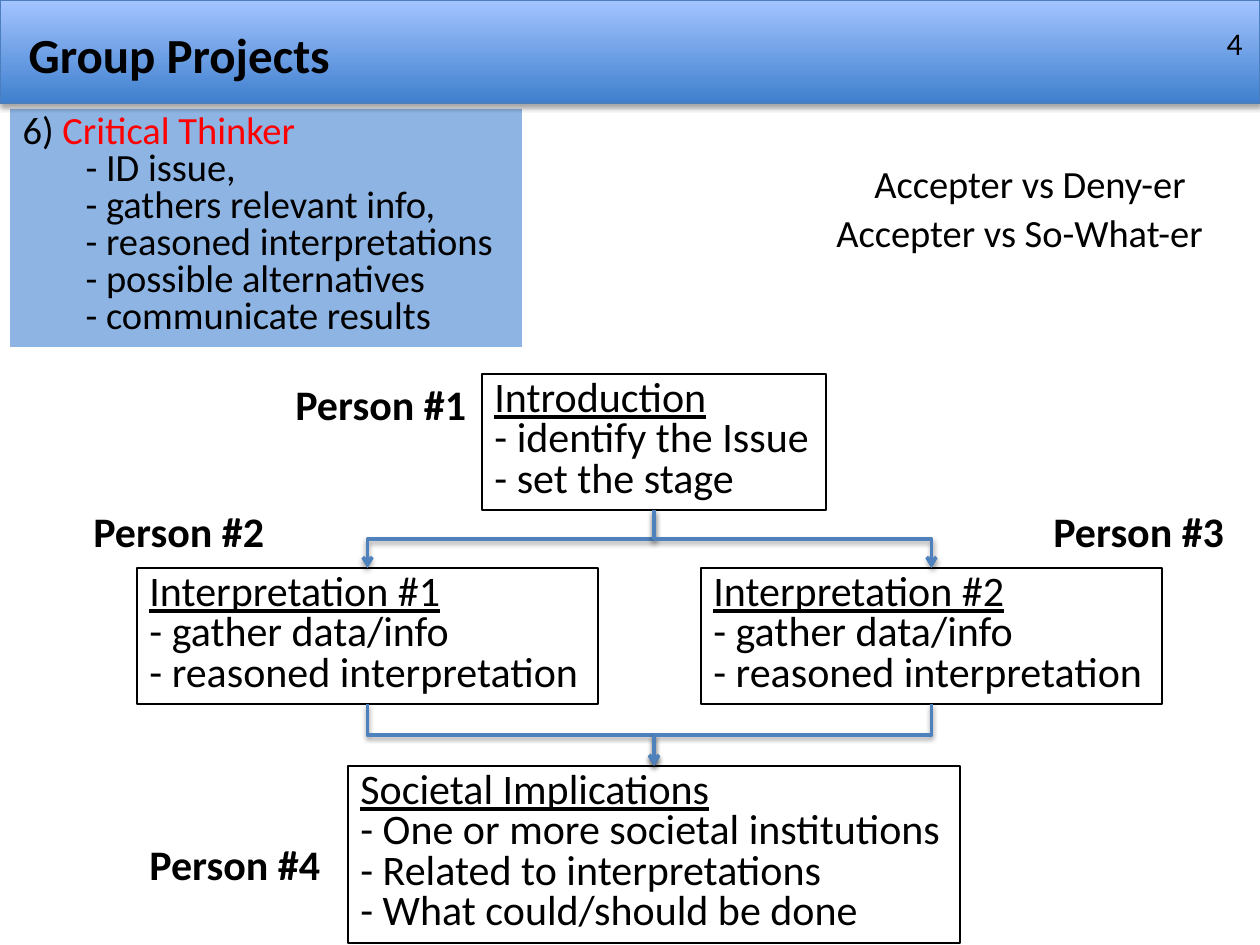
from dataclasses import dataclass

import pptx
import pptx.dml.color
import pptx.enum.dml
import pptx.enum.shapes
import pptx.enum.text
import pptx.oxml
import pptx.oxml.ns
import pptx.util
from pptx.dml.color import RGBColor

PX = 914400 / 126
FONT = "Calibri"
BLACK = RGBColor(0x00, 0x00, 0x00)
RED = RGBColor(0xFF, 0x00, 0x00)
PALE_BLUE = RGBColor(0x8E, 0xB4, 0xE3)
BAR_BOTTOM = RGBColor(0x3F, 0x80, 0xCE)
BAR_TOP = RGBColor(0xA4, 0xC4, 0xFF)
BAR_EDGE = RGBColor(0x4B, 0x7E, 0xBC)
ARROW_BLUE = RGBColor(0x4F, 0x81, 0xBD)

ALIGN = pptx.enum.text.PP_ALIGN
ANCHOR = pptx.enum.text.MSO_ANCHOR
AUTO = pptx.enum.text.MSO_AUTO_SIZE
RECT = pptx.enum.shapes.MSO_SHAPE.RECTANGLE
ELBOW = pptx.enum.shapes.MSO_CONNECTOR.ELBOW
BOTTOM, TOP = 2, 0


@dataclass
class Box:
    x: int
    y: int
    w: int
    h: int


@dataclass
class Step:
    box: Box
    heading: str
    items: list[str]


@dataclass
class Label:
    box: Box
    text: str
    size: int
    bold: bool = False


INTRO = Step(Box(482, 374, 344, 136), "Introduction", ["- identify the Issue", "- set the stage"])
FINDINGS = ["- gather data/info", "- reasoned interpretation"]
BRANCHES = [
    Step(Box(x, 568, 461, 136), f"Interpretation #{i}", FINDINGS)
    for i, x in enumerate((137, 701), 1)
]
SOCIETY = Step(
    Box(348, 766, 612, 177),
    "Societal Implications",
    ["- One or more societal institutions", "- Related to interpretations", "- What could/should be done"],
)
PERSON_SPOTS = [(283, 372), (81, 499), (1041, 499), (137, 832)]
LABELS = [
    Label(Box(862, 154, 344, 59), "Accepter vs Deny-er", 22),
    Label(Box(824, 203, 398, 59), "Accepter vs So-What-er", 22),
] + [
    Label(Box(x, y, 199, 63), f"Person #{i}", 24, True)
    for i, (x, y) in enumerate(PERSON_SPOTS, 1)
]
SKILLS = [
    "- ID issue,",
    "- gathers relevant info,",
    "- reasoned interpretations",
    "- possible alternatives",
    "- communicate results",
]


def px(n: float) -> int:
    return round(n * PX)


def place(shape, box: Box) -> None:
    shape.left, shape.top = px(box.x), px(box.y)
    shape.width, shape.height = px(box.w), px(box.h)


def format_run(r, size: int, bold: bool = False, color: RGBColor = BLACK) -> None:
    r.font.name = FONT
    r.font.size = pptx.util.Pt(size)
    r.font.bold = bold
    r.font.color.rgb = color


def add_shadow(shape, opacity: int, distance: float) -> None:
    sp_pr = shape._element.spPr
    for old in sp_pr.findall(pptx.oxml.ns.qn("a:effectLst")):
        sp_pr.remove(old)
    sp_pr.append(pptx.oxml.parse_xml(
        f'<a:effectLst {pptx.oxml.ns.nsdecls("a")}>'
        f'<a:outerShdw blurRad="{pptx.util.Pt(3.1)}" dist="{pptx.util.Pt(distance)}" '
        f'dir="5400000" rotWithShape="0"><a:srgbClr val="000000">'
        f'<a:alpha val="{opacity * 1000}"/></a:srgbClr></a:outerShdw></a:effectLst>'
    ))


def add_skills(sp) -> None:
    place(sp, Box(10, 109, 512, 238))
    sp.fill.solid()
    sp.fill.fore_color.rgb = PALE_BLUE
    tf = sp.text_frame
    tf.text = "\n".join(["6) ", *SKILLS])
    tf.auto_size = AUTO.NONE
    tf.paragraphs[0].add_run().text = "Critical Thinker"
    for i, p in enumerate(tf.paragraphs):
        p.line_spacing = 0.8
        p.space_before = pptx.util.Pt(0)
        p_pr = p._p.get_or_add_pPr()
        p_pr.set("marL", str(px(63) if i else 0))
        p_pr.set("indent", "0")
        p_pr.append(pptx.oxml.parse_xml(f'<a:buNone {pptx.oxml.ns.nsdecls("a")}/>'))
        for r in p.runs:
            format_run(r, 22)
    tf.paragraphs[0].runs[1].font.color.rgb = RED


def add_step(s, step: Step):
    sp = s.shapes.add_shape(RECT, 0, 0, 0, 0)
    place(sp, step.box)
    sp.shadow.inherit = False
    sp.fill.background()
    sp.line.color.rgb = BLACK
    sp.line.width = pptx.util.Pt(0.75)
    tf = sp.text_frame
    tf.text = "\n".join([step.heading, *step.items])
    tf.word_wrap = False
    tf.auto_size = AUTO.SHAPE_TO_FIT_TEXT
    tf.vertical_anchor = ANCHOR.TOP
    for i, p in enumerate(tf.paragraphs):
        p.alignment = ALIGN.LEFT
        p.line_spacing = 0.8
        format_run(p.runs[0], 24)
        p.runs[0].font.underline = i == 0
    return sp


def add_label(s, label: Label):
    sp = s.shapes.add_textbox(0, 0, 0, 0)
    place(sp, label.box)
    tf = sp.text_frame
    tf.text = label.text
    tf.word_wrap = False
    format_run(tf.paragraphs[0].runs[0], label.size, label.bold)
    return sp


def add_bar(s) -> None:
    bar = s.shapes.add_shape(RECT, 0, 0, 0, 0)
    place(bar, Box(0, 0, 1260, 103))
    bar.fill.gradient()
    bar.fill.gradient_angle = 90
    for stop, color in zip(bar.fill.gradient_stops, (BAR_BOTTOM, BAR_TOP)):
        stop.color.rgb = color
    bar.line.color.rgb = BAR_EDGE
    bar.line.width = pptx.util.Pt(0.75)
    add_shadow(bar, 35, 1.8)


def add_arrow(s, start, end) -> None:
    c = s.shapes.add_connector(ELBOW, 0, 0, 0, 0)
    c.begin_connect(start, BOTTOM)
    c.end_connect(end, TOP)
    x1, y1, x2, y2 = c.begin_x, c.begin_y, c.end_x, c.end_y
    c.width, c.height = y2 - y1, abs(x2 - x1)
    c.left = (x1 + x2 - c.width) // 2
    c.top = (y1 + y2 - c.height) // 2
    rightward = x2 > x1
    xfrm = c._element.spPr.find(pptx.oxml.ns.qn("a:xfrm"))
    xfrm.set("rot", str((270 if rightward else 90) * 60000))
    xfrm.set("flipH", "1" if rightward else "0")
    xfrm.set("flipV", "0")
    c.line.color.rgb = ARROW_BLUE
    c.line.width = pptx.util.Pt(2)
    c.line._get_or_add_ln().append(
        pptx.oxml.parse_xml(f'<a:tailEnd {pptx.oxml.ns.nsdecls("a")} type="arrow"/>')
    )
    add_shadow(c, 38, 1.6)


def add_title(s) -> None:
    title = s.shapes.title
    place(title, Box(16, 18, 1225, 72))
    s.shapes._spTree.append(title._element)
    tf = title.text_frame
    tf.text = "Group Projects"
    tf.auto_size = AUTO.NONE
    tf.vertical_anchor = ANCHOR.TOP
    tf.paragraphs[0].alignment = ALIGN.LEFT
    format_run(tf.paragraphs[0].runs[0], 28, True)


def main() -> None:
    prs = pptx.Presentation()
    prs.slide_width, prs.slide_height = px(1260), px(945)
    s = prs.slides.add_slide(prs.slide_layouts[1])
    add_skills(s.placeholders[1])
    intro, *branches, society = [add_step(s, step) for step in (INTRO, *BRANCHES, SOCIETY)]
    add_bar(s)
    for label in LABELS:
        add_label(s, label)
    number = add_label(s, Label(Box(961, 18, 294, 50), "4", 18))
    number.text_frame.word_wrap = True
    number.text_frame.vertical_anchor = ANCHOR.MIDDLE
    number.text_frame.paragraphs[0].alignment = ALIGN.RIGHT
    for branch in branches:
        add_arrow(s, intro, branch)
        add_arrow(s, branch, society)
    add_title(s)
    prs.save("out.pptx")


if __name__ == "__main__":
    main()
